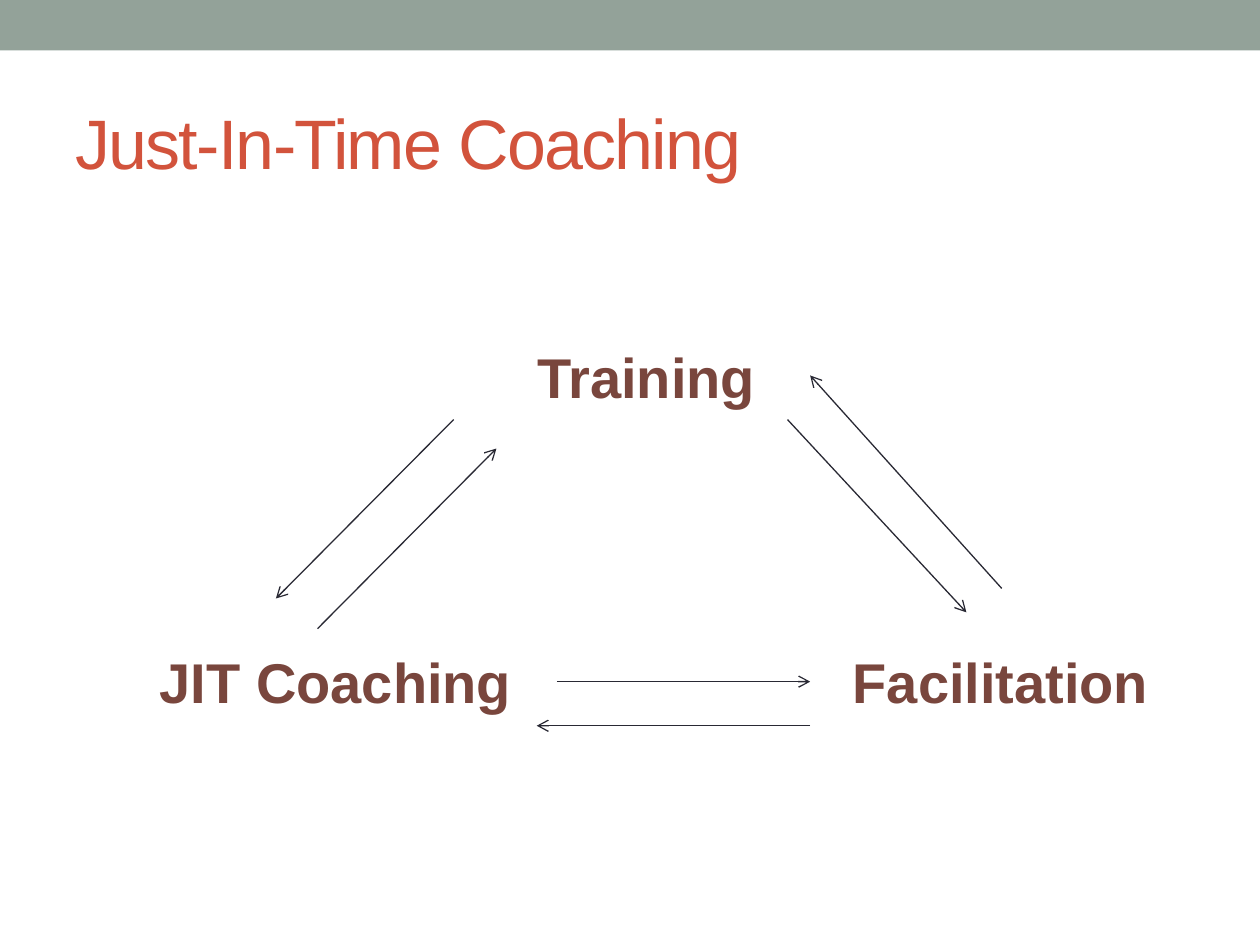
"""Build the Just-In-Time Coaching slide: three roles joined by arrows."""
from typing import NamedTuple

from pptx import Presentation
from pptx.dml.color import RGBColor
from pptx.enum.shapes import MSO_CONNECTOR, MSO_SHAPE
from pptx.enum.text import MSO_ANCHOR, PP_ALIGN
from pptx.oxml.ns import qn
from pptx.util import Inches, Pt
from lxml import etree

LINE, RECT = MSO_CONNECTOR.STRAIGHT, MSO_SHAPE.RECTANGLE
TOP, MIDDLE = MSO_ANCHOR.TOP, MSO_ANCHOR.MIDDLE
LEFT, CENTER = PP_ALIGN.LEFT, PP_ALIGN.CENTER

SAGE = RGBColor(0x93, 0xA2, 0x99)
RED = RGBColor(0xD2, 0x53, 0x3C)
BROWN = RGBColor(0x79, 0x46, 0x3D)
INK = RGBColor(0x29, 0x29, 0x34)

WIDTH, HEIGHT = Inches(10), Inches(7.5)
COL, ROW = WIDTH / 100, HEIGHT / 75


class Box(NamedTuple):
    col: float
    row: float
    cols: float
    rows: float


class Role(NamedTuple):
    text: str
    box: Box
    align: PP_ALIGN = LEFT
    wrap: bool = True


class Arrow(NamedTuple):
    col: float
    row: float
    to_col: float
    to_row: float


ROLES = [
    Role("Training", Box(39.2, 26.7, 24.2, 6.7), align=CENTER),
    Role("JIT Coaching", Box(11.7, 50.9, 32.5, 6.4)),
    Role("Facilitation", Box(66.7, 50.9, 25.7, 6.4), wrap=False),
]

ARROWS = [
    Arrow(62.5, 33.3, 76.7, 48.6),
    Arrow(44.2, 54.1, 64.3, 54.1),
    Arrow(36, 33.3, 21.9, 47.5),
    Arrow(64.3, 57.6, 42.6, 57.6),
    Arrow(25.2, 49.9, 39.4, 35.6),
    Arrow(79.5, 46.7, 64.3, 29.8),
]


def place(box: Box) -> list[int]:
    return [round(n * unit) for n, unit in zip(box, (COL, ROW, COL, ROW))]


def add_text(slide, text: str, box: Box, *, size: int, color: RGBColor,
             bold: bool = False, align: PP_ALIGN = LEFT,
             anchor: MSO_ANCHOR = TOP, wrap: bool = True,
             track: float = 0) -> None:
    frame = slide.shapes.add_textbox(*place(box)).text_frame
    frame.word_wrap = wrap
    frame.vertical_anchor = anchor
    par = frame.paragraphs[0]
    par.alignment = align
    run = par.add_run()
    run.text = text
    font = run.font
    font.name, font.size, font.bold = "Arial", Pt(size), bold
    font.color.rgb = color
    if track:
        run._r.get_or_add_rPr().set("spc", str(round(track * 100)))


def add_band(slide, box: Box, color: RGBColor) -> None:
    band = slide.shapes.add_shape(RECT, *place(box))
    band.shadow.inherit = False
    band.fill.solid()
    band.fill.fore_color.rgb = color
    band.line.fill.background()


def add_arrow(slide, arrow: Arrow) -> None:
    link = slide.shapes.add_connector(LINE, *place(Box(*arrow)))
    link.line.color.rgb = INK
    link.line.width = Pt(0.75)
    tail = etree.SubElement(link.line._get_or_add_ln(), qn("a:tailEnd"))
    tail.set("type", "arrow")
    etree.SubElement(link._element.spPr, qn("a:effectLst"))


def main() -> None:
    deck = Presentation()
    deck.slide_width, deck.slide_height = WIDTH, HEIGHT
    slide = deck.slides.add_slide(deck.slide_layouts[6])
    add_band(slide, Box(0, 0, 100, 4), SAGE)
    add_text(slide, "Just-In-Time Coaching", Box(5, 5.8, 90, 10.8),
             size=40, color=RED, anchor=MIDDLE, track=-1)
    for role in ROLES:
        add_text(slide, role.text, role.box, size=32, color=BROWN,
                 bold=True, align=role.align, wrap=role.wrap)
    for arrow in ARROWS:
        add_arrow(slide, arrow)
    deck.save("out.pptx")


if __name__ == "__main__":
    main()
